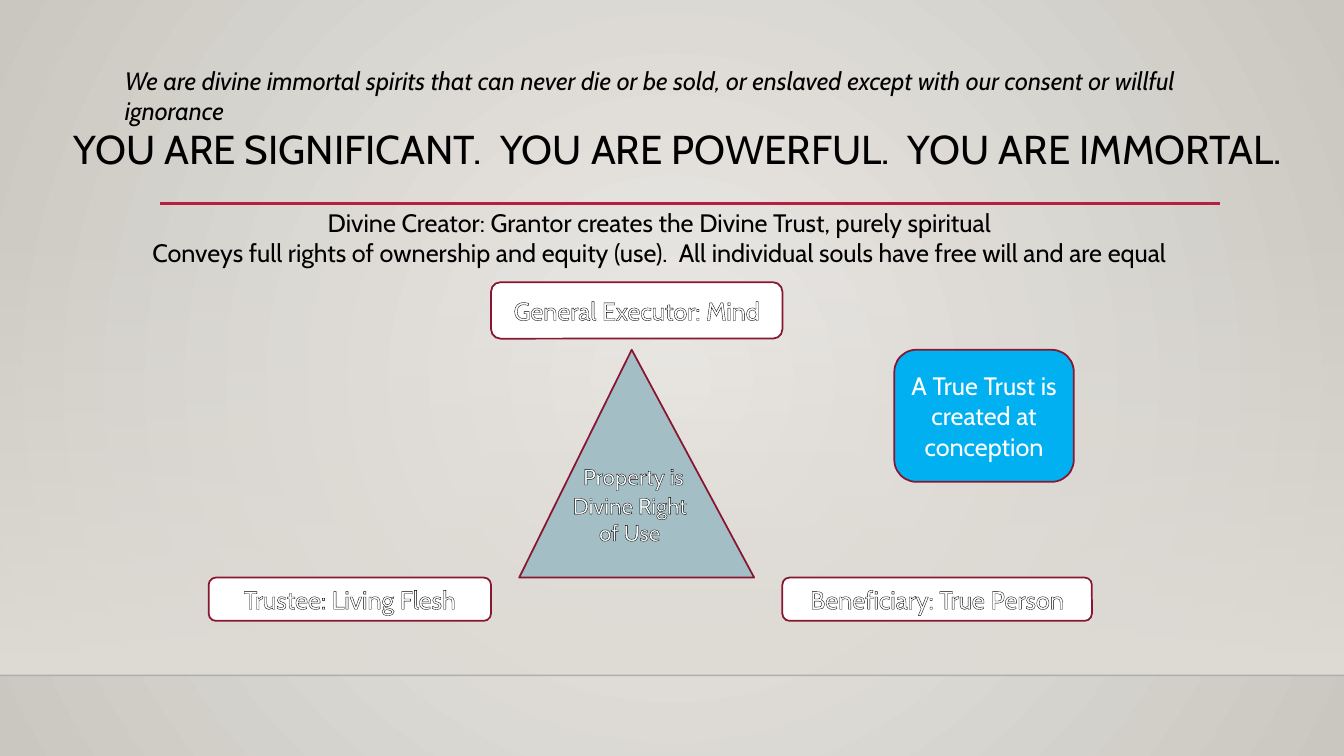
from lxml.etree import SubElement
from pptx import Presentation
from pptx.dml.color import RGBColor
from pptx.enum.shapes import MSO_CONNECTOR, MSO_SHAPE
from pptx.enum.text import MSO_ANCHOR, PP_ALIGN
from pptx.oxml.ns import qn
from pptx.util import Inches, Pt

FONT = "Cabin"
BLACK, WHITE = "000000", "FFFFFF"
RED, WINE, BLUE, TEAL = "B71E42", "871631", "00B0F0", "A4BEC6"


def paint(color, code):
    color.rgb = RGBColor.from_string(code)


def place(box):
    return [Inches(n) for n in box]


def fade(fill, first, last):
    """Fill with two colours, running downwards."""
    fill.gradient()
    fill.gradient_angle = 270
    for stop, code, pos in zip(fill.gradient_stops, (first, last), (0, 1)):
        paint(stop.color, code)
        stop.position = pos


def alpha(node, share):
    SubElement(node, qn("a:alpha"), val=str(share * 1000))


def edge(run):
    """Draw a thin black outline round the letters."""
    line = SubElement(run.font._element, qn("a:ln"), w=str(Pt(0.75)))
    solid = SubElement(line, qn("a:solidFill"))
    SubElement(solid, qn("a:srgbClr"), val=BLACK)


def write(shape, *lines, size=18, color=BLACK, align=PP_ALIGN.CENTER,
          anchor=MSO_ANCHOR.TOP, italic=None, outline=False, space=None):
    """Write one paragraph per line; a line is text or (text, size) pairs."""
    frame = shape.text_frame
    frame.word_wrap = True
    frame.vertical_anchor = anchor
    for i, line in enumerate(lines):
        para = frame.add_paragraph() if i else frame.paragraphs[0]
        para.alignment = align
        if space:
            para.line_spacing = space
        for text, points in [(line, size)] if isinstance(line, str) else line:
            run = para.add_run()
            run.text = text
            if outline:
                edge(run)
            font = run.font
            font.name, font.size, font.italic = FONT, Pt(points), italic
            paint(font.color, color)


def label(slide, box, *lines, **style):
    write(slide.shapes.add_textbox(*place(box)), *lines, **style)


def block(slide, kind, box, fill):
    shape = slide.shapes.add_shape(kind, *place(box))
    shape.shadow.inherit = False
    shape.fill.solid()
    paint(shape.fill.fore_color, fill)
    paint(shape.line.color, WINE)
    shape.line.width = Pt(1.25)
    return shape


def card(slide, box, text, fill=WHITE, outline=True):
    shape = block(slide, MSO_SHAPE.ROUNDED_RECTANGLE, box, fill)
    write(shape, text, color=WHITE, anchor=MSO_ANCHOR.MIDDLE, outline=outline)


def rule(slide, left, right, top, color, width):
    line = slide.shapes.add_connector(
        MSO_CONNECTOR.STRAIGHT, *place((left, top, right, top)))
    paint(line.line.color, color)
    line.line.width = Pt(width)
    SubElement(line._element.spPr, qn("a:effectLst"))
    return line


def backdrop(slide):
    # Round gradient behind everything
    fade(slide.background.fill, "ECEAE7", "CAC7C1")
    lin = slide._element.find(".//" + qn("a:lin"))
    grad = lin.getparent()
    grad.remove(lin)
    ring = SubElement(grad, qn("a:path"), path="circle")
    SubElement(ring, qn("a:fillToRect"), l="50000", t="50000", r="50000", b="50000")

    # Wall that fades in towards the floor
    wall = block(slide, MSO_SHAPE.RECTANGLE, (0, 2.21, 13.33, 4.49), WHITE)
    wall.line.fill.background()
    fade(wall.fill, "DFDBD5", "DFDBD5")
    alpha(wall._element.find(".//" + qn("a:gs"))[0], 0)

    # Floor line and title line
    floor = rule(slide, 0, 13.33, 6.7, "000001", 1)
    alpha(floor._element.find(".//" + qn("a:srgbClr")), 20)
    rule(slide, 1.59, 12.1, 2.02, RED, 2.5)


def heading(slide):
    title = slide.shapes.title
    title.left, title.top, title.width, title.height = place((0.56, 1.25, 12.33, 0.5))
    write(title, "YOU ARE SIGNIFICANT.  YOU ARE POWERFUL.  YOU ARE IMMORTAL.",
          size=28.8, anchor=MSO_ANCHOR.MIDDLE, space=0.9)
    slide.shapes._spTree.append(title._element)  # in front of the wall


def main():
    deck = Presentation()
    deck.slide_width, deck.slide_height = Inches(13.33), Inches(7.5)
    slide = deck.slides.add_slide(deck.slide_layouts[5])
    backdrop(slide)
    heading(slide)

    # Triangle and its text
    cone = block(slide, MSO_SHAPE.ISOSCELES_TRIANGLE, (5.15, 3.47, 2.33, 2.26), TEAL)
    cone.adjustments[0] = 0.479
    label(slide, (0.19, 2.01, 12.7, 0.71),
          "Divine Creator: Grantor creates the Divine Trust, purely spiritual",
          "Conveys full rights of ownership and equity (use).  "
          "All individual souls have free will and are equal")
    label(slide, (5.52, 4.43, 1.45, 1.04), [(" ", 24), ("Property is", 16)],
          "Divine Right of Use", size=16, color=WHITE, outline=True)

    # Roles at the corners
    card(slide, (2.07, 5.73, 2.8, 0.43), "Trustee: Living Flesh")
    card(slide, (4.87, 2.8, 2.89, 0.56), "General Executor: Mind")
    card(slide, (7.76, 5.73, 3.07, 0.43), "Beneficiary: True Person")

    # Motto and side note
    label(slide, (1.14, 0.6, 11.18, 0.4),
          "We are divine immortal spirits that can never die or be sold, "
          "or enslaved except with our consent or willful ignorance",
          align=PP_ALIGN.LEFT, italic=True)
    card(slide, (8.87, 3.47, 1.78, 1.31), "A True Trust is created at conception",
         fill=BLUE, outline=False)
    deck.save("out.pptx")


if __name__ == "__main__":
    main()
